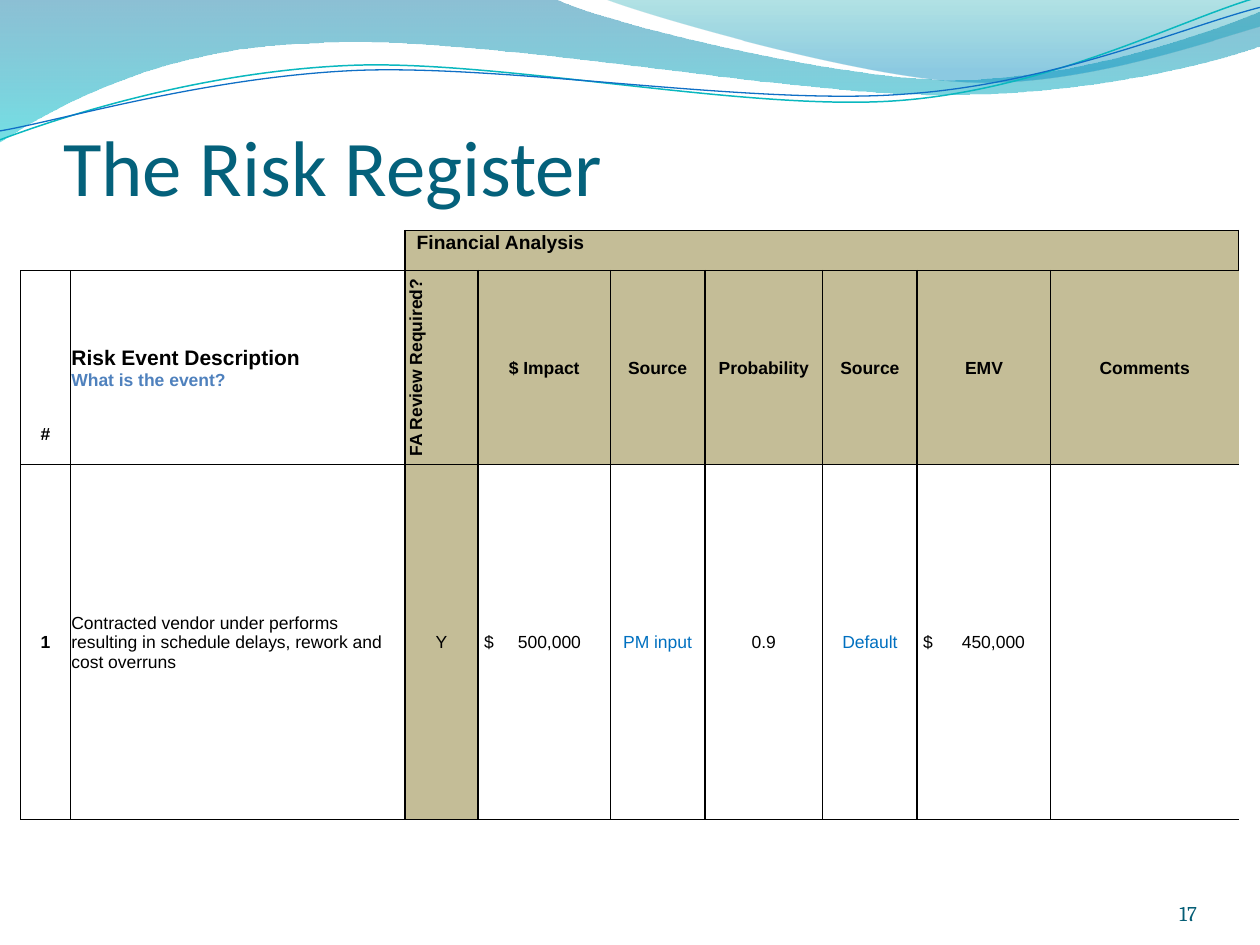
import pptx
import pptx.util
import pptx.dml.color
import pptx.enum.text
from pptx.oxml.ns import qn
from lxml import etree

Cm, Pt = pptx.util.Cm, pptx.util.Pt
ALIGN, ANCHOR = pptx.enum.text.PP_ALIGN, pptx.enum.text.MSO_ANCHOR
BLACK, BLUE, TAN = "000000", "0070C0", "C4BD97"

# Content
TITLE, NUMBER = "The Risk Register", "17"
BAND = "Financial Analysis"
HEADERS = ["#", "Risk Event Description\vWhat is the event?", "FA Review Required?",
           "$ Impact", "Source", "Probability", "Source", "EMV", "Comments"]
RISK = ["1", "Contracted vendor under performs resulting in schedule delays, "
        "rework and cost overruns", "Y", "$\t500,000", "PM input", "0.9",
        "Default", "$\t450,000", ""]

# Table geometry in cm, and the width in points of each vertical rule
COLS = [0.99, 6.75, 1.48, 2.66, 1.91, 2.37, 1.91, 2.69, 3.79]
ROWS = [0.79, 3.91, 7.16]
RULES = [0.5, 0.5, 1, 1, 0.5, 1, 0.5, 1, 1, None]
TABS = {3: 0.68, 7: 0.78}

# Header waves in cm: a start, then lines (2 numbers) or curves (6 numbers)
BANDS = [
    ([(0, 0), (11.18, -0.03), (12.09, 0.43, 16.87, 1.6, 19.25, 1.6),
      (21.67, 1.6, 24.33, 0.66, 25.4, 0.23), (25.43, 0.91),
      (24.97, 1.12, 22.1, 1.93, 18.95, 1.91), (15.8, 1.91, 9.7, 0.71, 6.53, 0.86),
      (3.28, 0.91, 1.17, 2.11, -0.03, 2.87)],
     [(0, "0074A1", 45), (1, "00C6CF", 55)]),
    ([(12.17, -0.03), (12.93, 0.28, 17.32, 1.57, 19.53, 1.65),
      (21.74, 1.75, 24.41, 0.81, 25.4, 0.53), (25.4, 0)],
     [(0, "00A1A9", 30), (0.8, "008BBF", 45)]),
]
STROKES = [
    ([(0, 2.82), (1.22, 2.36, 4.01, 1.45, 7.04, 1.32),
      (10.03, 1.19, 15.06, 2.26, 18.11, 2.03),
      (21.16, 1.8, 23.83, 0.38, 25.35, -0.05)], "0AB8BF", 0.85),
    ([(0, 2.64), (1.19, 2.44, 4.17, 1.55, 7.19, 1.42),
      (10.24, 1.3, 15.16, 2.13, 18.21, 1.9),
      (21.23, 1.7, 23.9, 0.53, 25.4, 0.15)], "0F6FC6", 0.75),
]


def rgb(code):
    return pptx.dml.color.RGBColor.from_string(code)


def style(p, font, size, color, bold=False):
    for r in p.runs:
        r.font.name, r.font.size, r.font.bold = font, Pt(size), bold
        r.font.color.rgb = rgb(color)


def add_wave(outline, close):
    """Draw the outline, then join each three curve points into one Bezier."""
    points = [(Cm(part[i]), Cm(part[i + 1]))
              for part in outline for i in range(0, len(part), 2)]
    fb = s.shapes.build_freeform(*points[0], scale=1.0)
    fb.add_line_segments(points[1:], close=close)
    sp = fb.convert_to_shape()
    sp.shadow.inherit = False
    segments = iter(list(sp._element.iter(qn("a:lnTo"))))
    for part in outline[1:]:
        first = next(segments)
        if len(part) == 6:
            first.tag = qn("a:cubicBezTo")
            for _ in range(2):
                extra = next(segments)
                first.append(extra[0])
                extra.getparent().remove(extra)
    return sp


def set_borders(cell, left=None, right=None, top=None, bottom=None):
    tcPr = cell._tc.get_or_add_tcPr()
    lines = []
    for side, width in zip("LRTB", (left, right, top, bottom)):
        ln = etree.Element(qn(f"a:ln{side}"), w=str(Pt(width or 0)))
        if width:
            fill = etree.SubElement(ln, qn("a:solidFill"))
            etree.SubElement(fill, qn("a:srgbClr"), val=BLACK)
        else:
            etree.SubElement(ln, qn("a:noFill"))
        lines.append(ln)
    tcPr[0:0] = lines


def fill_cell(cell, text, size=10, color=BLACK, bold=False, tan=False, center=True):
    cell.margin_left = cell.margin_right = cell.margin_top = Cm(0.03)
    cell.margin_bottom = 0
    cell.vertical_anchor = ANCHOR.MIDDLE
    if tan:
        cell.fill.solid()
        cell.fill.fore_color.rgb = rgb(TAN)
    else:
        cell.fill.background()
    p = cell.text_frame.paragraphs[0]
    p.text = text
    p.alignment = ALIGN.CENTER if center else ALIGN.LEFT
    style(p, "Arial", size, color, bold)
    return p


prs = pptx.Presentation()
prs.slide_width, prs.slide_height = Cm(25.4), Cm(19.05)
s = prs.slides.add_slide(prs.slide_layouts[5])

# Header waves
for outline, stops in BANDS:
    sp = add_wave(outline, True)
    sp.line.fill.background()
    sp.fill.gradient()
    sp.fill.gradient_angle = 270
    for stop, (position, color, _) in zip(sp.fill.gradient_stops, stops):
        stop.position = position
        stop.color.rgb = rgb(color)
    for clr, (_, _, opacity) in zip(sp._element.spPr.iter(qn("a:srgbClr")), stops):
        etree.SubElement(clr, qn("a:alpha"), val=str(opacity * 1000))
for outline, color, width in STROKES:
    sp = add_wave(outline, False)
    sp.fill.background()
    sp.line.color.rgb = rgb(color)
    sp.line.width = Pt(width)

# Title and slide number
number = s.shapes.add_textbox(Cm(22.02), Cm(17.65), Cm(2.11), Cm(1.02))
for sp, text, align, font, size, color in [
        (s.shapes.title, TITLE, ALIGN.LEFT, "Calibri", 45, "04617B"),
        (number, NUMBER, ALIGN.RIGHT, "Cambria", 12, "045D75")]:
    tf = sp.text_frame
    tf.text = text
    tf.word_wrap = True
    tf.auto_size = pptx.enum.text.MSO_AUTO_SIZE.NONE
    tf.vertical_anchor = ANCHOR.BOTTOM
    tf.margin_left = tf.margin_right = tf.margin_top = tf.margin_bottom = 0
    tf.paragraphs[0].alignment = align
    style(tf.paragraphs[0], font, size, color)
title = s.shapes.title
title.left, title.top, title.width, title.height = Cm(1.27), Cm(2.33), Cm(22.86), Cm(1.96)
title.text_frame.margin_top = Cm(0.13)

# Table
frame = s.shapes.add_table(len(ROWS), len(COLS), Cm(0.42), Cm(4.65),
                           Cm(sum(COLS)), Cm(sum(ROWS)))
tbl = frame.table
tbl.first_row = tbl.horz_banding = False
tbl._tbl.tblPr.find(qn("a:tableStyleId")).text = "{2D5ABB26-0587-4C30-8999-92F81FD0307C}"
for col, width in zip(tbl.columns, COLS):
    col.width = Cm(width)
for row, height in zip(tbl.rows, ROWS):
    row.height = Cm(height)

# Band over the financial columns
for c in range(len(COLS)):
    cell = tbl.cell(0, c)
    fill_cell(cell, BAND if c == 2 else "", 11, bold=True, tan=c >= 2, center=False)
    if c < 2:
        set_borders(cell, right=c or None, bottom=0.5)
    else:
        set_borders(cell, 1, 1, 1, 1)
band = tbl.cell(0, 2)
band.merge(tbl.cell(0, len(COLS) - 1))
band.vertical_anchor = ANCHOR.TOP
band.margin_left = Cm(0.24)

# Header and risk rows
for c, (header, value) in enumerate(zip(HEADERS, RISK)):
    head, body = tbl.cell(1, c), tbl.cell(2, c)
    p = fill_cell(head, header, bold=True, tan=c >= 2, center=c != 1)
    if c == 1:
        p.runs[0].font.size = Pt(12)
        p.runs[1].font.color.rgb = rgb("4F81BD")
    p = fill_cell(body, value, color=BLUE if c in (4, 6) else BLACK, bold=c == 0,
                  tan=c == 2, center=c != 1 and c not in TABS)
    if c in TABS:
        body.margin_left = Cm(0.12)
        tabs = etree.SubElement(p._p.get_or_add_pPr(), qn("a:tabLst"))
        etree.SubElement(tabs, qn("a:tab"), pos=str(Cm(TABS[c])), algn="l")
    set_borders(head, RULES[c], RULES[c + 1], 1 if c >= 2 else 0.5, 0.5)
    set_borders(body, RULES[c], RULES[c + 1], 0.5, 0.5)
tbl.cell(1, 0).vertical_anchor = ANCHOR.BOTTOM
tbl.cell(1, 0).margin_bottom = Cm(0.42)
tbl.cell(1, 2)._tc.get_or_add_tcPr().set("vert", "vert270")

prs.save("out.pptx")
